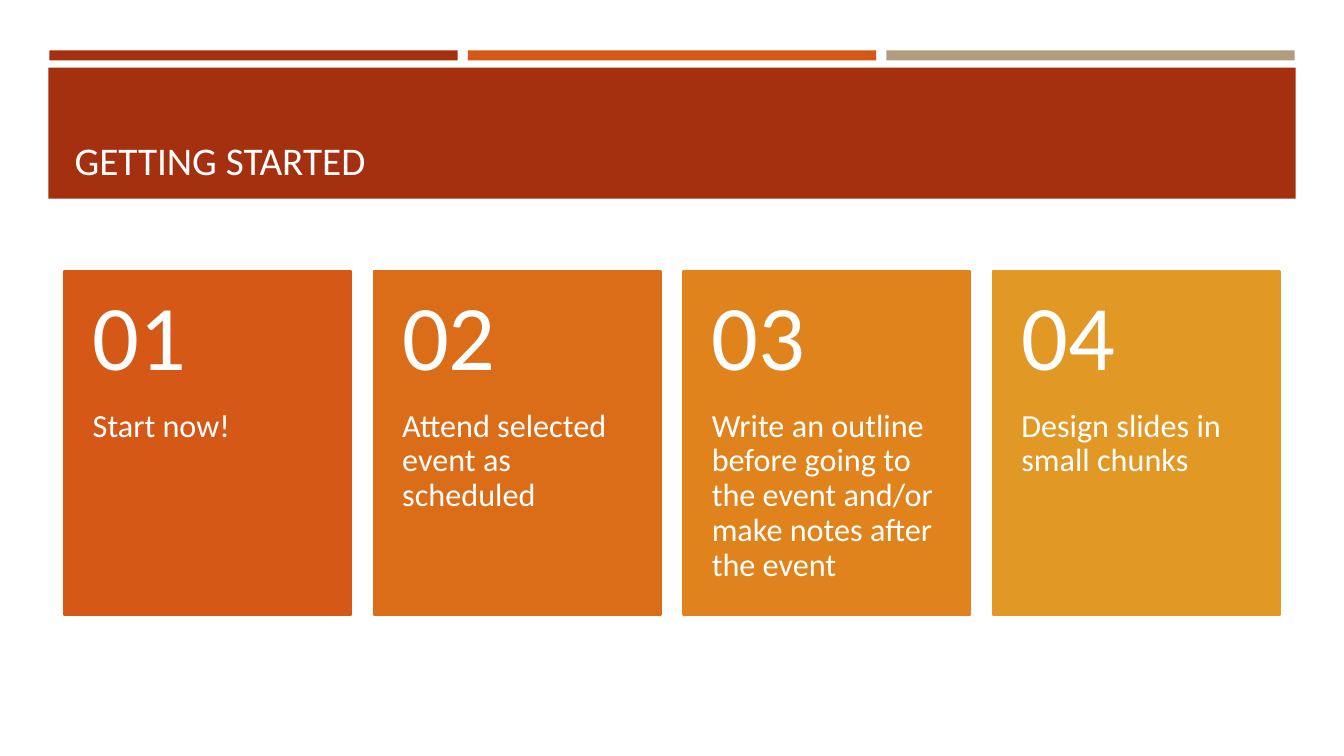
import pptx
import pptx.util
import pptx.dml.color
import pptx.enum.shapes
import pptx.enum.text

PX = 9144  # EMU, 100 px to the inch
FONT = "Calibri"
COLORS = {
    "red": "A5300F",
    "tan": "B19C7D",
    "step1": "D55816",
    "step2": "DB6D19",
    "step3": "E1831C",
    "step4": "E19825",
    "title": "FFFEFF",
    "white": "FFFFFF",
}
STEPS = [
    "Start now!",
    "Attend selected event as scheduled",
    "Write an outline before going to the event and/or make notes after the event",
    "Design slides in small chunks",
]
Anchor = pptx.enum.text.MSO_ANCHOR


def color(name):
    return pptx.dml.color.RGBColor.from_string(COLORS[name])


def scale(*sizes):
    return [pptx.util.Emu(size * PX) for size in sizes]


def block(slide, box, fill, line=None):
    shape = slide.shapes.add_shape(
        pptx.enum.shapes.MSO_SHAPE.RECTANGLE, *scale(*box))
    shape.shadow.inherit = False
    shape.fill.solid()
    shape.fill.fore_color.rgb = color(fill)
    if line:
        shape.line.color.rgb = color(fill)
        shape.line.width = pptx.util.Pt(line)
    else:
        shape.line.fill.background()


def write(shape, text, size, ink, anchor, insets):
    """Fill a shape with one left-aligned paragraph; insets run left, top, right, bottom."""
    frame = shape.text_frame
    frame.text = text
    frame.word_wrap = True
    frame.auto_size = pptx.enum.text.MSO_AUTO_SIZE.NONE
    frame.vertical_anchor = anchor
    (frame.margin_left, frame.margin_top,
     frame.margin_right, frame.margin_bottom) = scale(*insets)
    para = frame.paragraphs[0]
    para.alignment = pptx.enum.text.PP_ALIGN.LEFT
    para.line_spacing = 0.9
    font = para.runs[0].font
    font.name = FONT
    font.size = pptx.util.Pt(size)
    font.color.rgb = color(ink)


def header(slide, box, text):
    left, top, width, height = box
    for i, fill in enumerate(["red", "step1", "tan"]):
        block(slide, (left + 1 + i * 415, top, 405, 10), fill)
    block(slide, (left, top + 17, width, height - 17), "red")
    title = slide.shapes.title
    title.left, title.top, title.width, title.height = scale(
        left + 16, top + 27, width - 31, height - 36)
    write(title, text, 28, "title", Anchor.BOTTOM, (10, 5, 10, 5))
    slide.shapes.element.append(title.element)  # in front of the band


def card(slide, box, number, text):
    left, top, width, height = box
    head = 137
    block(slide, box, f"step{number}", 1.75)
    body = slide.shapes.add_textbox(
        *scale(left, top + head, width, height - head))
    write(body, text, 23, "white", Anchor.TOP, (28, 0, 28, 36))
    label = slide.shapes.add_textbox(*scale(left, top, width, head))
    write(label, f"{number:02}", 66, "white", Anchor.MIDDLE, (28, 18, 28, 18))


def cards(slide, box, gap=23):
    left, top, width, height = box
    wide = (width - gap * (len(STEPS) - 1)) // len(STEPS)
    for i, text in enumerate(STEPS):
        card(slide, (left + i * (wide + gap), top, wide, height), i + 1, text)


def main():
    deck = pptx.Presentation()
    deck.slide_width, deck.slide_height = scale(1333, 750)
    slide = deck.slides.add_slide(deck.slide_layouts[5])
    header(slide, (48, 50, 1237, 147), "GETTING STARTED")
    cards(slide, (64, 269, 1205, 341))
    deck.save("out.pptx")


if __name__ == "__main__":
    main()
